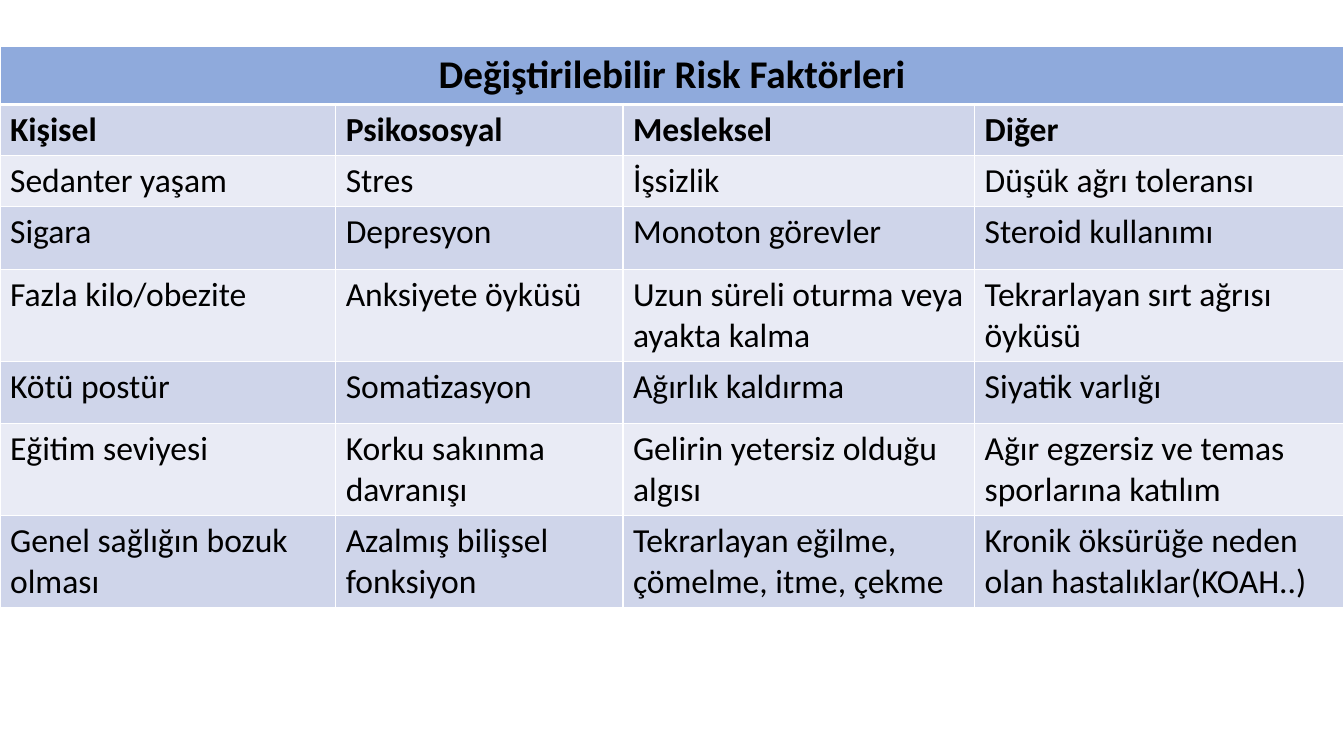
from dataclasses import dataclass

from lxml import etree
from pptx import Presentation
from pptx import util as u
from pptx.dml.color import RGBColor
from pptx.enum import text
from pptx.oxml import ns
from pptx.table import _Cell

FONT = "Calibri"
COL_WIDTHS = (8.46, 7.24, 8.86, 9.31)


@dataclass(frozen=True)
class Row:
    height: float
    texts: tuple[str, ...]
    size: int = 24
    bold: bool = False


ROWS = (
    Row(1.46, ("Değiştirilebilir Risk Faktörleri",), 28, True),
    Row(1.29, ("Kişisel", "Psikososyal", "Mesleksel", "Diğer"), bold=True),
    Row(1.29, ("Sedanter yaşam", "Stres", "İşsizlik", "Düşük ağrı toleransı")),
    Row(1.57, ("Sigara", "Depresyon", "Monoton görevler", "Steroid kullanımı")),
    Row(2.32, ("Fazla kilo/obezite", "Anksiyete öyküsü",
               "Uzun süreli oturma veya ayakta kalma",
               "Tekrarlayan sırt ağrısı öyküsü")),
    Row(1.57, ("Kötü postür", "Somatizasyon", "Ağırlık kaldırma", "Siyatik varlığı")),
    Row(2.32, ("Eğitim seviyesi", "Korku sakınma davranışı",
               "Gelirin yetersiz olduğu algısı",
               "Ağır egzersiz ve temas sporlarına katılım")),
    Row(2.32, ("Genel sağlığın bozuk olması", "Azalmış bilişsel fonksiyon",
               "Tekrarlayan eğilme, çömelme, itme, çekme",
               "Kronik öksürüğe neden olan hastalıklar(KOAH..)")),
)


def color(value: str) -> RGBColor:
    return RGBColor.from_string(value)


def set_borders(cell: _Cell, top: float, bottom: float) -> None:
    """Draw white borders: 1 pt at the sides, given widths above and below."""
    tc_pr = cell._tc.get_or_add_tcPr()
    for side, width in (("L", 1), ("R", 1), ("T", top), ("B", bottom)):
        ln = etree.SubElement(tc_pr, ns.qn(f"a:ln{side}"), w=str(u.Pt(width)))
        fill = etree.SubElement(ln, ns.qn("a:solidFill"))
        etree.SubElement(fill, ns.qn("a:srgbClr"), val="FFFFFF")


def set_text(cell: _Cell, content: str, row: Row) -> None:
    p = cell.text_frame.paragraphs[0]
    r = p.add_run()
    r.text = content
    r.font.name = FONT
    r.font.size = u.Pt(row.size)
    r.font.bold = row.bold
    r.font.color.rgb = color("000000")


def row_fill(index: int) -> str:
    if index == 0:
        return "8FAADC"
    return "CFD5EA" if index % 2 else "E9EBF5"


def main() -> None:
    prs = Presentation()
    prs.slide_width, prs.slide_height = u.Cm(33.87), u.Cm(19.05)
    s = prs.slides.add_slide(prs.slide_layouts[6])

    table = s.shapes.add_table(
        len(ROWS), len(COL_WIDTHS), u.Cm(0), u.Cm(1.17),
        u.Cm(sum(COL_WIDTHS)), u.Cm(sum(row.height for row in ROWS)),
    ).table
    for column, width in zip(table.columns, COL_WIDTHS):
        column.width = u.Cm(width)

    for i, row in enumerate(ROWS):
        table.rows[i].height = u.Cm(row.height)
        for cell in table.rows[i].cells:
            set_borders(cell, top=3 if i == 1 else 1, bottom=3 if i == 0 else 1)
            cell.fill.solid()
            cell.fill.fore_color.rgb = color(row_fill(i))
        for j, content in enumerate(row.texts):
            set_text(table.cell(i, j), content, row)

    heading = table.cell(0, 0)
    heading.merge(table.cell(0, len(COL_WIDTHS) - 1))
    heading.text_frame.paragraphs[0].alignment = text.PP_ALIGN.CENTER

    prs.save("out.pptx")


if __name__ == "__main__":
    main()
